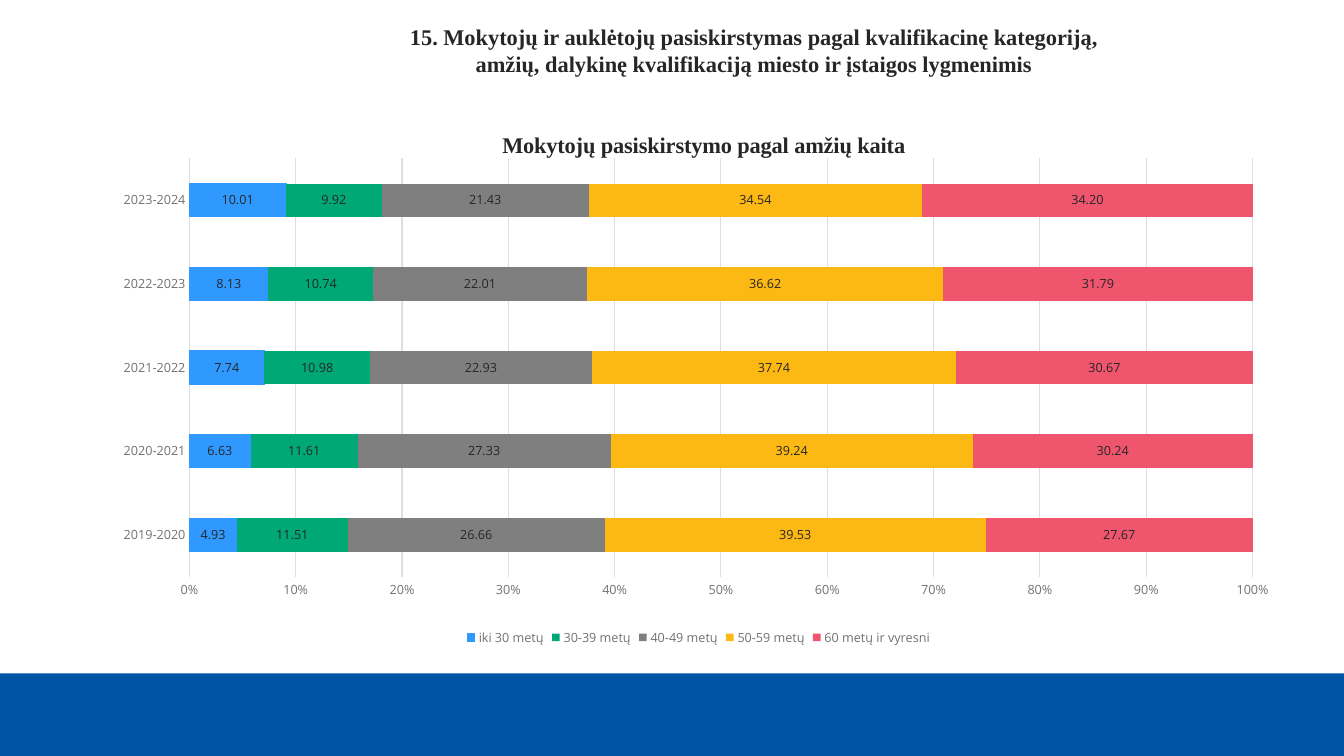
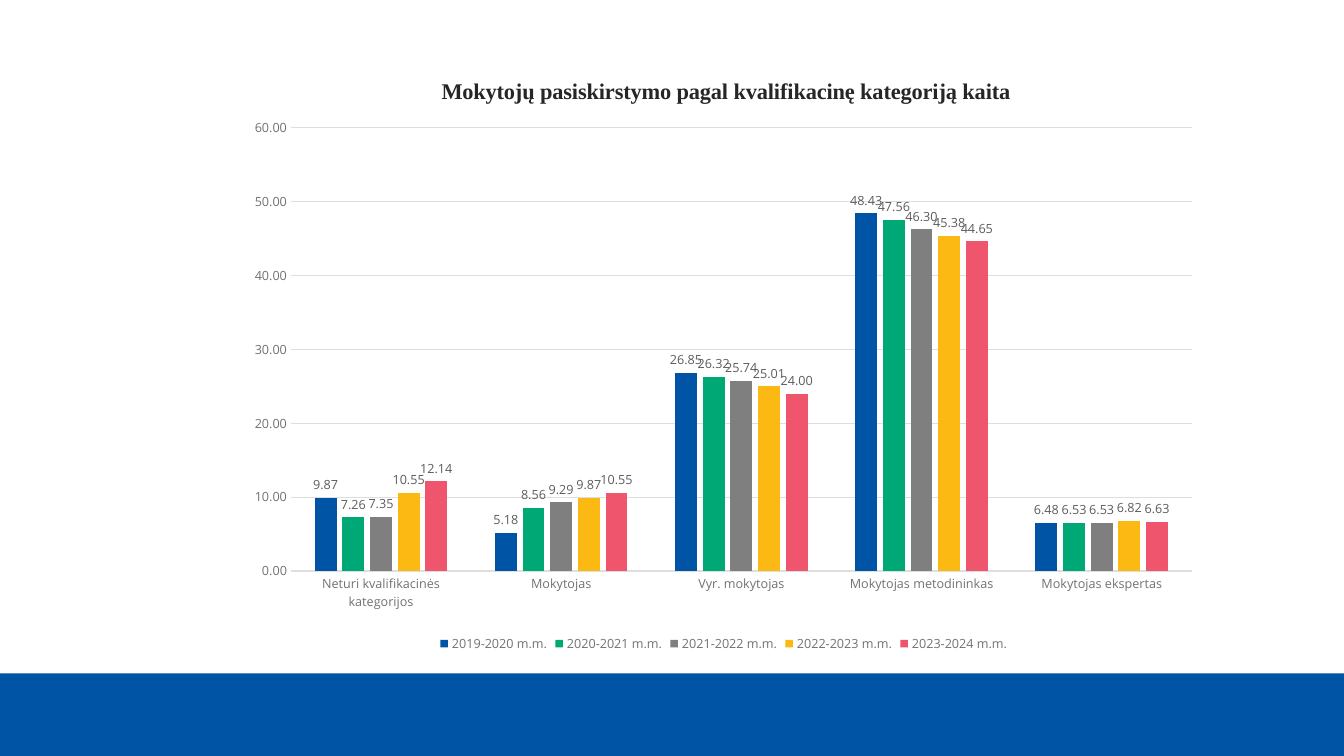
"""Builds two slides on how teachers are distributed by age and by qualification category."""
from dataclasses import dataclass

from lxml.etree import SubElement
from pptx import Presentation
from pptx.chart.data import CategoryChartData
from pptx.dml.color import RGBColor
from pptx.enum.chart import XL_CHART_TYPE, XL_LABEL_POSITION, XL_LEGEND_POSITION, XL_TICK_MARK
from pptx.enum.shapes import MSO_SHAPE
from pptx.enum.text import MSO_ANCHOR, MSO_AUTO_SIZE, PP_ALIGN
from pptx.oxml.ns import qn
from pptx.util import Pt


@dataclass(frozen=True)
class Theme:
    heading_font: str = "Times New Roman"
    body_font: str = "Open Sans"
    heading_size: int = 16
    chart_size: int = 9
    ink: str = "262626"
    axis_ink: str = "727272"
    label_ink: str = "5C5C5C"
    grid: str = "DEDEDE"
    band: str = "0054A5"
    sky: str = "3099FF"
    shared_series: tuple = ("00A875", "7F7F7F", "FCB813", "EF566D")


THEME = Theme()
SLIDE_WIDTH, SLIDE_HEIGHT = 960, 540
BAND_TOP = 481
TITLE_ONLY, BLANK = 5, 6

AGE_YEARS = ["2019-2020", "2020-2021", "2021-2022", "2022-2023", "2023-2024"]
AGE_SHARES = {
    "iki 30 metų": (4.93, 6.63, 7.74, 8.13, 10.01),
    "30-39 metų": (11.51, 11.61, 10.98, 10.74, 9.92),
    "40-49 metų": (26.66, 27.33, 22.93, 22.01, 21.43),
    "50-59 metų": (39.53, 39.24, 37.74, 36.62, 34.54),
    "60 metų ir vyresni": (27.67, 30.24, 30.67, 31.79, 34.2),
}
QUALIFICATIONS = ["Neturi kvalifikacinės kategorijos", "Mokytojas", "Vyr. mokytojas",
                  "Mokytojas metodininkas", "Mokytojas ekspertas"]
QUALIFICATION_SHARES = {
    "2019-2020 m.m.": (9.87, 5.18, 26.85, 48.43, 6.48),
    "2020-2021 m.m.": (7.26, 8.56, 26.32, 47.56, 6.53),
    "2021-2022 m.m.": (7.35, 9.29, 25.74, 46.3, 6.53),
    "2022-2023 m.m.": (10.55, 9.87, 25.01, 45.38, 6.82),
    "2023-2024 m.m.": (12.14, 10.55, 24, 44.65, 6.63),
}


def style_font(font, color, size=THEME.chart_size, name=THEME.body_font, bold=False):
    font.name, font.size, font.bold = name, Pt(size), bold
    font.color.rgb = RGBColor.from_string(color)


def style_heading(paragraph):
    paragraph.alignment = PP_ALIGN.CENTER
    style_font(paragraph.font, THEME.ink, THEME.heading_size, THEME.heading_font, True)


def style_line(line, color):
    line.color.rgb = RGBColor.from_string(color)
    line.width = Pt(0.75)


def add_master_band(prs, slide):
    band = slide.shapes.add_shape(MSO_SHAPE.RECTANGLE, 0, Pt(BAND_TOP),
                                  Pt(SLIDE_WIDTH), Pt(SLIDE_HEIGHT - BAND_TOP))
    band.shadow.inherit = False
    band.fill.solid()
    band.fill.fore_color.rgb = RGBColor.from_string(THEME.band)
    band.line.fill.background()
    prs.slide_master.shapes.element.insert(2, band.element)


def set_title(slide, lines, box):
    title = slide.shapes.title
    title.left, title.top, title.width, title.height = map(Pt, box)
    frame = title.text_frame
    frame.word_wrap = True
    frame.auto_size = MSO_AUTO_SIZE.NONE
    frame.vertical_anchor = MSO_ANCHOR.TOP
    frame.text = "\n".join(lines)
    for paragraph in frame.paragraphs:
        style_heading(paragraph)


def place(parent, inner=False, **fractions):
    layout = parent.find(qn("c:layout"))
    if layout is None:
        layout = parent.makeelement(qn("c:layout"))
        parent.insert(0, layout)
    manual = SubElement(layout, qn("c:manualLayout"))
    settings = {"layoutTarget": "inner"} if inner else {}
    settings |= {"xMode": "edge", "yMode": "edge"} | fractions
    for tag, value in settings.items():
        SubElement(manual, qn(f"c:{tag}")).set("val", str(value))


def style_axes(chart, value_format):
    categories, values = chart.category_axis, chart.value_axis
    for axis in (categories, values):
        axis.major_tick_mark = axis.minor_tick_mark = XL_TICK_MARK.NONE
        style_font(axis.tick_labels.font, THEME.axis_ink)
    style_line(categories.format.line, THEME.grid)
    values.format.line.fill.background()
    values.has_major_gridlines = True
    style_line(values.major_gridlines.format.line, THEME.grid)
    values.tick_labels.number_format = value_format
    values.tick_labels.number_format_is_linked = False


def style_series(plot, colors, label_color, label_position):
    for series, color in zip(plot.series, colors):
        series.format.fill.solid()
        series.format.fill.fore_color.rgb = RGBColor.from_string(color)
        labels = series.data_labels
        labels.show_value = True
        labels.number_format = "0.00"
        labels.number_format_is_linked = False
        labels.position = label_position
        style_font(labels.font, label_color)


def add_bar_chart(slide, kind, box, heading, heading_at, plot_area, categories, shares,
                  first_color, label_color, label_position, gap, overlap, value_format):
    data = CategoryChartData(number_format="0.00")
    data.categories = categories
    for name, values in shares.items():
        data.add_series(name, values)
    chart = slide.shapes.add_chart(kind, *map(Pt, box), data).chart
    style_font(chart.font, THEME.ink, 10)

    chart.has_title = True
    chart.chart_title.include_in_layout = False
    chart.chart_title.text_frame.text = heading
    style_heading(chart.chart_title.text_frame.paragraphs[0])
    place(chart.chart_title.element, **dict(zip("xy", heading_at)))
    place(chart.element.find(f".//{qn('c:plotArea')}"), inner=True,
          **dict(zip("xywh", plot_area)))

    chart.has_legend = True
    chart.legend.position = XL_LEGEND_POSITION.BOTTOM
    chart.legend.include_in_layout = False
    style_font(chart.legend.font, THEME.axis_ink)

    plot = chart.plots[0]
    plot.vary_by_categories = False
    plot.gap_width, plot.overlap = gap, overlap
    style_axes(chart, value_format)
    style_series(plot, (first_color, *THEME.shared_series), label_color, label_position)
    return chart


def add_age_slide(prs):
    slide = prs.slides.add_slide(prs.slide_layouts[TITLE_ONLY])
    add_master_band(prs, slide)
    chart = add_bar_chart(
        slide, XL_CHART_TYPE.BAR_STACKED_100, (78, 75, 842, 389.5),
        "Mokytojų pasiskirstymo pagal amžių kaita", (0.33, 0.04),
        (0.068, 0.098, 0.902, 0.767), AGE_YEARS, AGE_SHARES, THEME.sky, THEME.ink,
        XL_LABEL_POSITION.CENTER, gap=150, overlap=100, value_format="0%")
    style_line(chart.plots[0].series[0].format.line, THEME.sky)
    set_title(slide, ("15. Mokytojų ir auklėtojų pasiskirstymas pagal kvalifikacinę kategoriją,",
                      "amžių, dalykinę kvalifikaciją miesto ir įstaigos lygmenimis"),
              (215, 13, 647, 46))


def add_qualification_slide(prs):
    slide = prs.slides.add_slide(prs.slide_layouts[BLANK])
    add_bar_chart(
        slide, XL_CHART_TYPE.COLUMN_CLUSTERED, (168, 39, 698, 430),
        "Mokytojų pasiskirstymo pagal kvalifikacinę kategoriją kaita", (0.207, 0.03),
        (0.057, 0.122, 0.922, 0.736), QUALIFICATIONS, QUALIFICATION_SHARES, THEME.band,
        THEME.label_ink, XL_LABEL_POSITION.OUTSIDE_END, gap=219, overlap=-27,
        value_format="#,##0.00")


def main():
    prs = Presentation()
    prs.slide_width, prs.slide_height = Pt(SLIDE_WIDTH), Pt(SLIDE_HEIGHT)
    add_age_slide(prs)
    add_qualification_slide(prs)
    prs.save("out.pptx")


if __name__ == "__main__":
    main()
